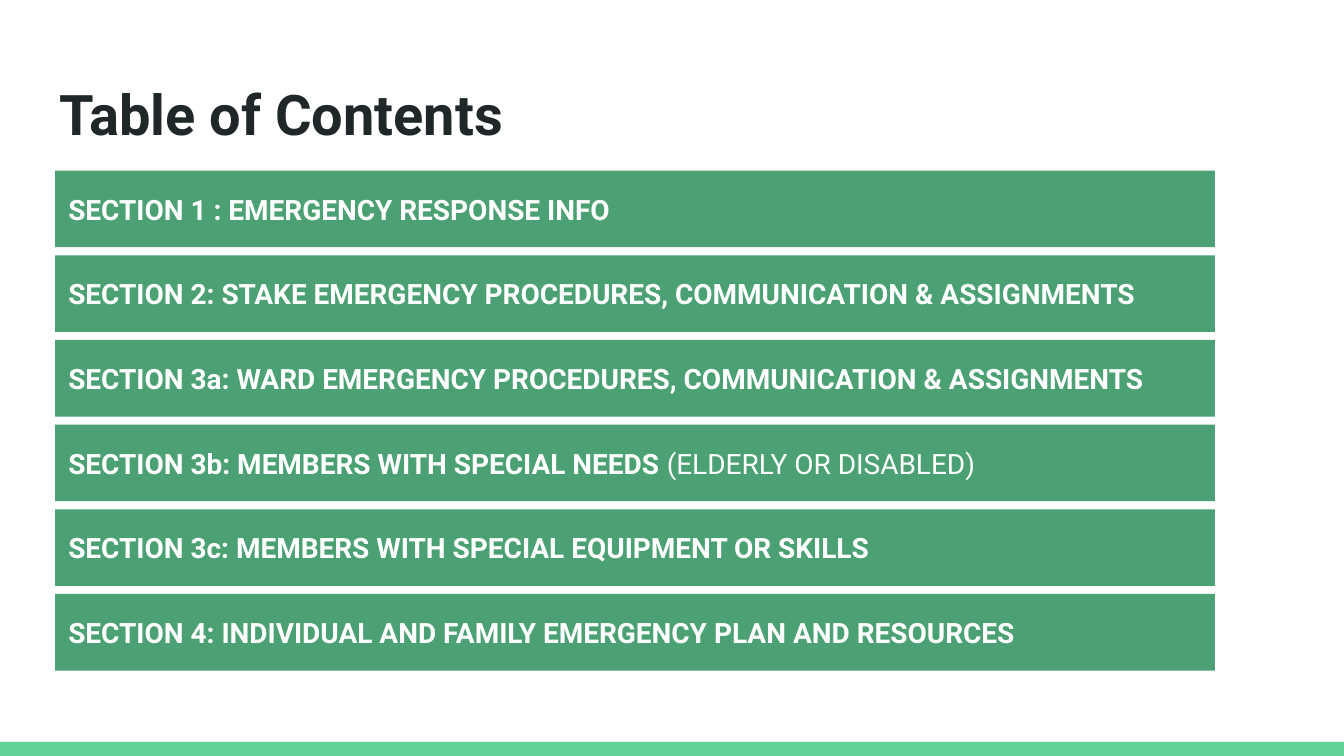
from pptx import Presentation
from pptx.dml.color import RGBColor
from pptx.enum.shapes import MSO_SHAPE
from pptx.enum.text import MSO_ANCHOR, MSO_AUTO_SIZE, PP_ALIGN
from pptx.util import Inches, Pt

RECTANGLE = MSO_SHAPE.RECTANGLE
TOP, MIDDLE = MSO_ANCHOR.TOP, MSO_ANCHOR.MIDDLE
LEFT = PP_ALIGN.LEFT
NO_AUTOFIT = MSO_AUTO_SIZE.NONE
TITLE_ONLY = 5

FONT = "Roboto"
COLORS = {
    "background": "FFFFFF",
    "title": "202729",
    "section": "4BA173",
    "section_text": "FFFFFF",
    "footer": "63D297",
}

# Each section: bold text, regular text
SECTIONS = [
    ("SECTION 1 : EMERGENCY RESPONSE INFO", ""),
    ("SECTION 2: STAKE EMERGENCY PROCEDURES, COMMUNICATION & ASSIGNMENTS", ""),
    ("SECTION 3a: WARD EMERGENCY PROCEDURES, COMMUNICATION & ASSIGNMENTS", ""),
    ("SECTION 3b: MEMBERS WITH SPECIAL NEEDS ", "(ELDERLY OR DISABLED)"),
    ("SECTION 3c: MEMBERS WITH SPECIAL EQUIPMENT OR SKILLS", ""),
    ("SECTION 4: INDIVIDUAL AND FAMILY EMERGENCY PLAN AND RESOURCES", ""),
]
SECTION_TOP, SECTION_HEIGHT, SECTION_PITCH = 1.27, 0.57, 0.63


def write_text(shape, bold_text, regular_text="", *, size, color, anchor, inset):
    """Fill a shape with one left-aligned line; inset is the margin on all sides but the left."""
    frame = shape.text_frame
    frame.word_wrap = True
    frame.auto_size = NO_AUTOFIT
    frame.vertical_anchor = anchor
    frame.margin_left = Inches(0.1)
    frame.margin_right = frame.margin_top = frame.margin_bottom = Inches(inset)
    paragraph = frame.paragraphs[0]
    paragraph.alignment = LEFT
    paragraph.line_spacing = 1.0
    for text, bold in ((bold_text, True), (regular_text, False)):
        if text:
            run = paragraph.add_run()
            run.text = text
            run.font.name = FONT
            run.font.size = Pt(size)
            run.font.bold = bold
            run.font.color.rgb = RGBColor.from_string(COLORS[color])


def add_bar(slide, left, top, width, height, color):
    bar = slide.shapes.add_shape(
        RECTANGLE, Inches(left), Inches(top), Inches(width), Inches(height))
    bar.shadow.inherit = False
    bar.fill.solid()
    bar.fill.fore_color.rgb = RGBColor.from_string(COLORS[color])
    bar.line.fill.background()
    return bar


presentation = Presentation()
presentation.slide_width = Inches(10)
presentation.slide_height = Inches(10 * 9 / 16)
slide = presentation.slides.add_slide(presentation.slide_layouts[TITLE_ONLY])
slide.background.fill.solid()
slide.background.fill.fore_color.rgb = RGBColor.from_string(COLORS["background"])

add_bar(slide, 0, 5.52, 10, 0.11, "footer")

title = slide.shapes.title
title.left, title.top = Inches(0.34), Inches(0.49)
title.width, title.height = Inches(9.32), Inches(0.63)
write_text(title, "Table of Contents", size=30, color="title", anchor=TOP, inset=0.1)

for index, (bold_text, regular_text) in enumerate(SECTIONS):
    top = SECTION_TOP + index * SECTION_PITCH
    section_bar = add_bar(slide, 0.41, top, 8.63, SECTION_HEIGHT, "section")
    write_text(section_bar, bold_text, regular_text,
               size=15, color="section_text", anchor=MIDDLE, inset=0)

presentation.save("out.pptx")
